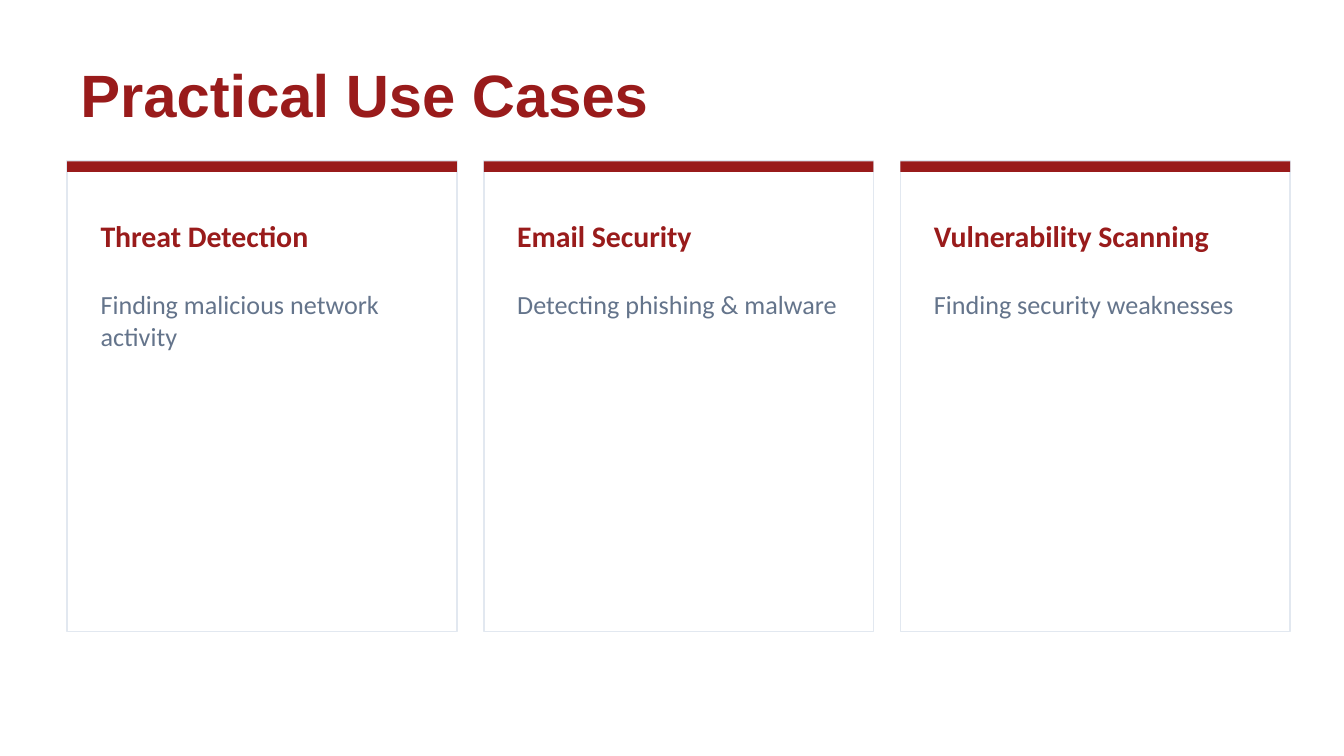
from dataclasses import dataclass

from pptx import Presentation
from pptx.dml.color import RGBColor
from pptx.enum.shapes import MSO_SHAPE
from pptx.enum.text import MSO_ANCHOR
from pptx.util import Inches, Pt


@dataclass(frozen=True)
class Theme:
    red: str = "991B1B"
    gray: str = "64748B"
    edge: str = "E2E8F0"
    white: str = "FFFFFF"
    title: int = 32
    head: int = 16
    body: int = 14
    bold_font: str = "Arial"
    main_font: str = "Calibri"


class Deck:
    def __init__(self, slide, theme):
        self.slide = slide
        self.theme = theme

    def rect(self, x, y, w, h, fill, line=None):
        box = self.slide.shapes.add_shape(
            MSO_SHAPE.RECTANGLE, Inches(x), Inches(y), Inches(w), Inches(h))
        box.shadow.inherit = False
        box.fill.solid()
        box.fill.fore_color.rgb = RGBColor.from_string(fill)
        if line:
            box.line.color.rgb = RGBColor.from_string(line)
            box.line.width = Pt(1)
        else:
            box.line.fill.background()

    def text(self, words, x, y, w, h, size, color, font,
             bold=False, anchor=MSO_ANCHOR.MIDDLE):
        box = self.slide.shapes.add_textbox(
            Inches(x), Inches(y), Inches(w), Inches(h))
        frame = box.text_frame
        frame.word_wrap = True
        frame.vertical_anchor = anchor
        frame.text = words
        for run in frame.paragraphs[0].runs:
            run.font.name = font
            run.font.size = Pt(size)
            run.font.bold = bold
            run.font.color.rgb = RGBColor.from_string(color)

    def card(self, x, head, body):
        t = self.theme
        y, wide, pad = 1.2, 2.9, 0.15
        self.rect(x, y, wide, 3.5, t.white, t.edge)
        self.rect(x, y, wide, 0.08, t.red)
        left, inner = x + pad, wide - 2 * pad
        self.text(head, left, y + 0.3, inner, 0.5,
                  t.head, t.red, t.main_font, bold=True)
        self.text(body, left, y + 0.9, inner, 2.4,
                  t.body, t.gray, t.main_font, anchor=MSO_ANCHOR.TOP)


CARDS = [
    ("Threat Detection", "Finding malicious network activity"),
    ("Email Security", "Detecting phishing & malware"),
    ("Vulnerability Scanning", "Finding security weaknesses"),
]


def main():
    # Widescreen 16:9 page
    show = Presentation()
    show.slide_width = Inches(10)
    show.slide_height = Inches(10) * 9 // 16
    slide = show.slides.add_slide(show.slide_layouts[6])
    theme = Theme()
    deck = Deck(slide, theme)

    # Background
    slide.background.fill.solid()
    slide.background.fill.fore_color.rgb = RGBColor.from_string(theme.white)

    # Title
    deck.text("Practical Use Cases", 0.5, 0.4, 9, 0.6,
              theme.title, theme.red, theme.bold_font, bold=True)

    # Row of use case cards
    for i, (head, body) in enumerate(CARDS):
        deck.card(0.5 + 3.1 * i, head, body)

    show.save("out.pptx")


if __name__ == "__main__":
    main()
